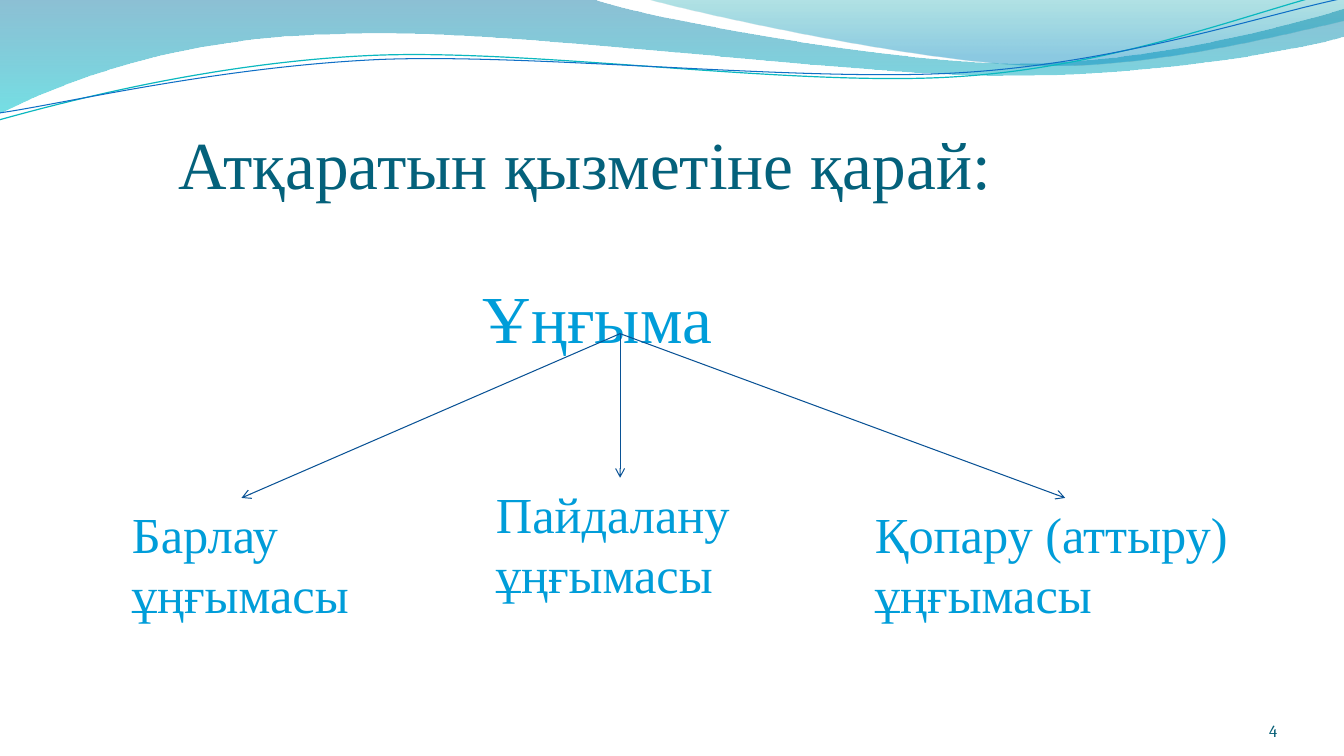
"""Build a slide that sorts boreholes by the job they do, under a wave header."""
from dataclasses import dataclass
from math import cos, radians, sin
from typing import Optional

from lxml.etree import SubElement
from pptx import Presentation
from pptx.dml.color import RGBColor
from pptx.enum.shapes import MSO_CONNECTOR
from pptx.enum.text import MSO_ANCHOR, MSO_AUTO_SIZE, PP_ALIGN
from pptx.oxml.ns import qn
from pptx.util import Inches, Pt

Point = tuple[float, float]
BOTTOM_SITE, TOP_SITE = 2, 0


@dataclass(frozen=True)
class Theme:
    serif: str = "Times New Roman"
    number_font: str = "Cambria"
    title: str = "04617B"
    text: str = "009DD9"
    number: str = "045D75"
    arrow: str = "095295"
    heading_size: float = 48
    kind_size: float = 36
    number_size: float = 12
    arrow_width: float = 0.75


@dataclass(frozen=True)
class GradientStop:
    position: float
    color: str
    opacity: int


@dataclass(frozen=True)
class Wave:
    start: Point
    segments: list[list[Point]]
    stops: tuple[GradientStop, ...] = ()
    line_color: str = ""
    line_width: float = 0
    center: Point = (0, 0)
    tilt: float = 0


@dataclass(frozen=True)
class Label:
    text: str
    left: float
    top: float
    width: float
    height: float
    size: float
    color: str
    font: str = Theme.serif
    insets: tuple[float, float, float, float] = (0.1, 0.05, 0.1, 0.05)
    anchor: MSO_ANCHOR = MSO_ANCHOR.TOP
    align: PP_ALIGN = PP_ALIGN.LEFT


THEME = Theme()

WAVES = [
    Wave((0, 0), [
        [(5.87, -0.01)],
        [(6.34, 0.17), (8.85, 0.63), (10.11, 0.63)],
        [(11.38, 0.63), (12.78, 0.26), (13.33, 0.09)],
        [(13.35, 0.36)],
        [(13.11, 0.44), (11.6, 0.76), (9.94, 0.75)],
        [(8.29, 0.75), (5.09, 0.28), (3.43, 0.34)],
        [(1.72, 0.36), (0.61, 0.83), (-0.01, 1.13)],
        [(0, 0)],
    ], stops=(GradientStop(0, "0074A1", 45), GradientStop(1, "00C6CF", 55))),
    Wave((6.39, -0.01), [
        [(6.79, 0.11), (9.09, 0.62), (10.25, 0.65)],
        [(11.41, 0.69), (12.82, 0.32), (13.33, 0.21)],
        [(13.33, 0)],
        [(6.39, -0.01)],
    ], stops=(GradientStop(0, "00A1A9", 30), GradientStop(0.8, "008BBF", 45))),
    Wave((-0.01, 1.19), [
        [(0.64, 1.01), (2.11, 0.62), (3.69, 0.55)],
        [(5.27, 0.48), (7.9, 0.87), (9.5, 0.76)],
        [(11.1, 0.66), (12.52, 0.08), (13.31, -0.1)],
    ], line_color="0AB8BF", line_width=0.85, center=(6.65, 0.58), tilt=-2.7),
    Wave((0, 1.12), [
        [(0.63, 1.03), (2.18, 0.66), (3.78, 0.59)],
        [(5.37, 0.53), (7.96, 0.82), (9.55, 0.72)],
        [(11.15, 0.62), (12.55, 0.14), (13.34, -0.02)],
    ], line_color="0F6FC6", line_width=0.75, center=(6.67, 0.59), tilt=-2.7),
]

TITLE = Label("Атқаратын қызметіне қарай:", 0.67, 0.77, 12, 1.25, THEME.heading_size,
              THEME.title, insets=(1.1, 0.05, 0, 0.01), anchor=MSO_ANCHOR.BOTTOM)
ROOT = Label("Ұңғыма", 3.58, 2.2, 5.14, 1.11, THEME.heading_size, THEME.text,
             insets=(1.21, 0.54, 0.1, 0))
KINDS = [
    Label(text, left, top, width, 1.31, THEME.kind_size, THEME.text)
    for text, left, top, width in (
        ("Барлау ұңғымасы", 1.21, 4.94, 2.37),
        ("Пайдалану ұңғымасы", 4.82, 4.74, 2.66),
        ("Қопару (аттыру) ұңғымасы", 8.58, 4.94, 3.97),
    )
]
SLIDE_NUMBER = Label("4", 11.56, 6.95, 1.11, 0.4, THEME.number_size, THEME.number,
                     THEME.number_font, (0, 0, 0, 0), MSO_ANCHOR.BOTTOM, PP_ALIGN.RIGHT)


def level(point: Point, wave: Wave) -> tuple[int, int]:
    """Return a point in EMU with the tilt of its wave taken out."""
    angle = radians(-wave.tilt)
    dx, dy = point[0] - wave.center[0], point[1] - wave.center[1]
    return (Inches(wave.center[0] + dx * cos(angle) - dy * sin(angle)),
            Inches(wave.center[1] + dx * sin(angle) + dy * cos(angle)))


def bend(shape, segments: list[list[Point]]) -> None:
    """Turn each run of three straight steps into one cubic curve."""
    outline = next(shape._element.iter(qn("a:path")))
    steps = iter(outline.findall(qn("a:lnTo")))
    for segment in segments:
        first, *others = [next(steps) for _ in segment]
        if others:
            first.tag = qn("a:cubicBezTo")
            for step in others:
                first.append(step[0])
                outline.remove(step)


def add_wave(slide, wave: Wave) -> None:
    """Draw one gradient band or one thin line of the header."""
    builder = slide.shapes.build_freeform(*level(wave.start, wave))
    builder.add_line_segments(
        [level(point, wave) for segment in wave.segments for point in segment],
        close=bool(wave.stops))
    shape = builder.convert_to_shape()
    bend(shape, wave.segments)
    shape.rotation = wave.tilt
    shape.shadow.inherit = False
    if not wave.stops:
        shape.fill.background()
        shape.line.color.rgb = RGBColor.from_string(wave.line_color)
        shape.line.width = Pt(wave.line_width)
        return
    shape.line.fill.background()
    shape.fill.gradient()
    shape.fill.gradient_angle = 270
    for target, stop in zip(shape.fill.gradient_stops, wave.stops):
        target.position = stop.position
        target.color.rgb = RGBColor.from_string(stop.color)
    for color, stop in zip(shape._element.spPr.iter(qn("a:srgbClr")), wave.stops):
        SubElement(color, qn("a:alpha")).set("val", str(stop.opacity * 1000))


def add_label(slide, label: Label, shape: Optional[object] = None):
    """Place a label in the given placeholder or in a new text box."""
    box = [Inches(n) for n in (label.left, label.top, label.width, label.height)]
    if shape is None:
        shape = slide.shapes.add_textbox(*box)
    shape.left, shape.top, shape.width, shape.height = box
    frame = shape.text_frame
    frame.text = label.text
    frame.word_wrap = True
    frame.auto_size = MSO_AUTO_SIZE.NONE
    frame.vertical_anchor = label.anchor
    (frame.margin_left, frame.margin_top,
     frame.margin_right, frame.margin_bottom) = [Inches(n) for n in label.insets]
    paragraph = frame.paragraphs[0]
    paragraph.alignment = label.align
    font = paragraph.runs[0].font
    font.name = label.font
    font.size = Pt(label.size)
    font.color.rgb = RGBColor.from_string(label.color)
    return shape


def add_arrow(slide, source, target) -> None:
    """Join the bottom of one box to the top of another with an arrow."""
    connector = slide.shapes.add_connector(MSO_CONNECTOR.STRAIGHT, 0, 0, 0, 0)
    connector.begin_connect(source, BOTTOM_SITE)
    connector.end_connect(target, TOP_SITE)
    connector.line.color.rgb = RGBColor.from_string(THEME.arrow)
    connector.line.width = Pt(THEME.arrow_width)
    properties = connector._element.spPr
    SubElement(properties.find(qn("a:ln")), qn("a:tailEnd")).set("type", "arrow")
    SubElement(properties, qn("a:effectLst"))


def main() -> None:
    """Build and save the slide."""
    presentation = Presentation()
    presentation.slide_width, presentation.slide_height = Inches(13.33), Inches(7.5)
    slide = presentation.slides.add_slide(presentation.slide_layouts[5])
    for wave in WAVES:
        add_wave(slide, wave)
    add_label(slide, TITLE, slide.shapes.title)
    root = add_label(slide, ROOT)
    for kind in [add_label(slide, label) for label in KINDS]:
        add_arrow(slide, root, kind)
    add_label(slide, SLIDE_NUMBER)
    presentation.save("out.pptx")


if __name__ == "__main__":
    main()
